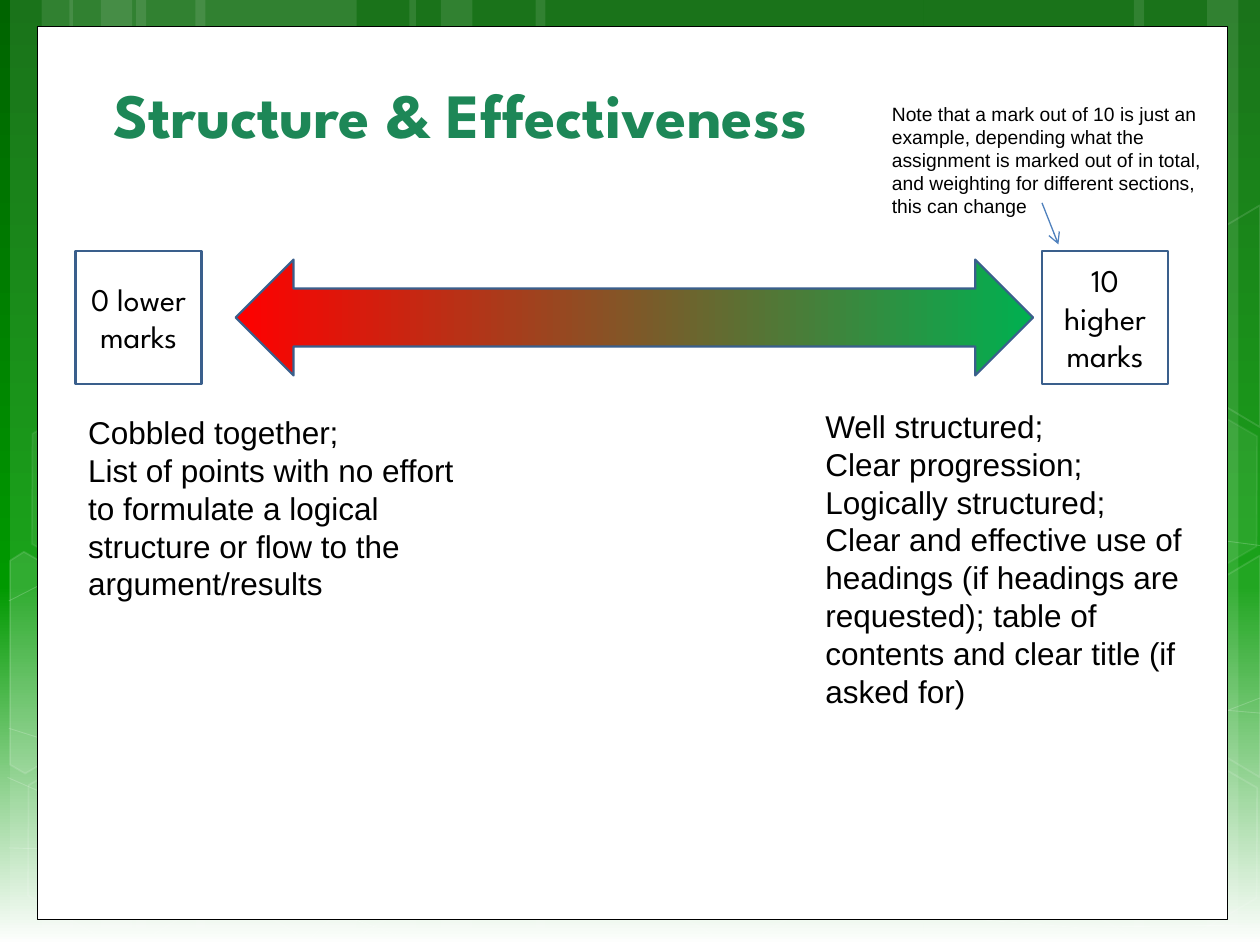
from typing import NamedTuple, Optional

from lxml.etree import SubElement
from pptx import Presentation
from pptx.dml.color import RGBColor
from pptx.enum.shapes import MSO_CONNECTOR, MSO_SHAPE
from pptx.enum.text import MSO_ANCHOR, MSO_AUTO_SIZE, PP_ALIGN
from pptx.oxml.ns import qn
from pptx.util import Inches, Pt

WHITE, BLACK = "FFFFFF", "000000"
OUTLINE = "3A5F8C"
HEADING_FONT, BODY_FONT = "League Spartan", "Arial"


class Box(NamedTuple):
    left: float
    top: float
    width: float
    height: float


class Hexagon(NamedTuple):
    left: float
    top: float
    fill_alpha: Optional[int]
    line_alpha: int


class Trace(NamedTuple):
    points: list
    width: float
    line_alpha: int
    fill_alpha: Optional[int] = None
    closed: bool = False


class Criteria(NamedTuple):
    box: Box
    lines: list


class Mark(NamedTuple):
    box: Box
    label: str


BANDS = [
    (1.08, 1.75), (0.08, 0.5), (0.33, 0.83), (1.55, 1.75), (0.55, 0.5), (0.8, 0.83),
    (7.33, 1.75), (9.58, 0.42), (9, 0.83), (4.25, 3.08), (3.25, 0.5), (3.5, 0.83),
]
HEXAGONS = [
    Hexagon(4.97, 5.89, 6, 12), Hexagon(0.11, 5.91, None, 12),
    Hexagon(0.14, 3.12, 7, 8), Hexagon(1.74, 5.92, None, 12),
    Hexagon(8.34, 5.93, None, 12), Hexagon(8.34, 3.14, 7, 8),
]
TRACES = [
    Trace([(0.07, 6.73), (1.9, 6.78), (4.58, 6.65), (7.92, 6.17), (9.4, 5.77), (10, 5.54)], 0.5, 20),
    Trace([(0.07, 4.77), (0.5, 4.55), (1.21, 4.31), (3.47, 3.87), (6.54, 3.87), (10, 4.33)], 0.5, 20),
    Trace([(0.06, 6.17), (1.8, 6.93), (3.34, 7.49)], 0.5, 20),
    Trace([(0.07, 5.78), (1.28, 6.16), (3.57, 6.73), (6.28, 7.18), (8.53, 7.36), (10, 7.34)], 0.5, 20),
    Trace([(2.42, 7.49), (3.02, 6.91), (3.88, 6.39), (6.08, 5.78), (7.94, 5.62), (9.53, 5.62), (10, 5.66)], 0.5, 20),
    Trace([(0.08, 4.45), (0.19, 4.38), (0.96, 4.82), (0.95, 5.7), (0.2, 6.14), (0.08, 6.07)], 1, 12, 10, True),
    Trace([(9.26, 4.85), (10, 4.41), (10, 6.17), (9.26, 5.73)], 1, 12, 4, True),
    Trace([(9.26, 2.07), (10, 1.63), (10, 3.39), (9.26, 2.95)], 1, 12, None, True),
]
CRITERIA = [
    Criteria(Box(0.6, 3.23, 3.25, 1.62), [
        "Cobbled together;",
        "List of points with no effort to formulate a logical structure or flow to the argument/results",
    ]),
    Criteria(Box(6.45, 3.18, 3.05, 2.52), [
        "Well structured;",
        "Clear progression;",
        "Logically structured;",
        "Clear and effective use of headings (if headings are requested); "
        "table of contents and clear title (if asked for)",
    ]),
]
MARKS = [
    Mark(Box(0.6, 1.99, 1, 1.06), "0 lower marks"),
    Mark(Box(8.27, 1.99, 1, 1.06), "10 higher marks"),
]
NOTE = (
    "Note that a mark out of 10 is just an example, depending what the assignment is "
    "marked out of in total, and weighting for different sections, this can change"
)


def rgb(hex_color: str) -> RGBColor:
    return RGBColor.from_string(hex_color)


def paint(fill, hex_color: Optional[str], holder=None, alpha: Optional[int] = None) -> None:
    if hex_color is None:
        fill.background()
        return
    fill.solid()
    fill.fore_color.rgb = rgb(hex_color)
    if alpha is not None:
        color = holder.find(qn("a:solidFill")).find(qn("a:srgbClr"))
        SubElement(color, qn("a:alpha")).set("val", str(alpha * 1000))


def paint_gradient(fill, holder, stops: list, angle: int) -> None:
    fill.gradient()
    stop_list = holder.find(".//" + qn("a:gsLst"))
    for stop in list(stop_list):
        stop_list.remove(stop)
    for position, hex_color in stops:
        stop = SubElement(stop_list, qn("a:gs"))
        stop.set("pos", str(position * 1000))
        SubElement(stop, qn("a:srgbClr")).set("val", hex_color)
    holder.find(".//" + qn("a:lin")).set("ang", str(angle * 60000))


def place(shape, box: Box) -> None:
    shape.left, shape.top, shape.width, shape.height = map(Inches, box)


def add_figure(slide, preset, box: Box, fill: Optional[str], line: Optional[str], width: float = 1):
    figure = slide.shapes.add_shape(preset, *map(Inches, box))
    figure.shadow.inherit = False
    paint(figure.fill, fill)
    paint(figure.line.fill, line)
    figure.line.width = Pt(width)
    return figure


def glaze(figure, fill_alpha: Optional[int], line_alpha: Optional[int], width: float = 1) -> None:
    figure.shadow.inherit = False
    properties = figure.element.spPr
    paint(figure.fill, None if fill_alpha is None else WHITE, properties, fill_alpha)
    figure.line.width = Pt(width)
    paint(figure.line.fill, None if line_alpha is None else WHITE, properties.find(qn("a:ln")), line_alpha)


def add_trace(slide, trace: Trace) -> None:
    start, *rest = [(Inches(x), Inches(y)) for x, y in trace.points]
    builder = slide.shapes.build_freeform(*start)
    builder.add_line_segments(rest, close=trace.closed)
    glaze(builder.convert_to_shape(), trace.fill_alpha, trace.line_alpha, trace.width)


def add_backdrop(slide) -> None:
    paint_gradient(slide.background.fill, slide.element, [(0, "006400"), (62, "009900"), (100, WHITE)], 90)
    for left, width in BANDS:
        band = add_figure(slide, MSO_SHAPE.RECTANGLE, Box(left, 0, width, 7.5), None, None)
        glaze(band, 10, None)
    for trace in TRACES:
        add_trace(slide, trace)
    for hexagon in HEXAGONS:
        cell = add_figure(slide, MSO_SHAPE.HEXAGON, Box(hexagon.left, hexagon.top, 1.75, 1.52), None, None)
        cell.adjustments[0] = 0.285
        cell.rotation = 30
        glaze(cell, hexagon.fill_alpha, hexagon.line_alpha)
    add_figure(slide, MSO_SHAPE.RECTANGLE, Box(0.3, 0.21, 9.44, 7.09), WHITE, BLACK, 0.5)


def write(shape, text: str, font: str, size: int, color: str = BLACK, bold: bool = False,
          align=PP_ALIGN.LEFT, anchor=MSO_ANCHOR.TOP) -> None:
    frame = shape.text_frame
    frame.text = text
    frame.word_wrap = True
    frame.auto_size = MSO_AUTO_SIZE.NONE
    frame.vertical_anchor = anchor
    for paragraph in frame.paragraphs:
        paragraph.alignment = align
        paragraph.space_before = Pt(0)
        for run in paragraph.runs:
            run.font.name, run.font.size, run.font.bold = font, Pt(size), bold
            run.font.color.rgb = rgb(color)


def fill_criteria(placeholder, criteria: Criteria) -> None:
    place(placeholder, criteria.box)
    write(placeholder, "\n".join(criteria.lines), BODY_FONT, 18)
    for paragraph in placeholder.text_frame.paragraphs:
        properties = paragraph._p.get_or_add_pPr()
        properties.set("marL", "0")
        properties.set("indent", "0")
        SubElement(properties, qn("a:buNone"))


def add_pointer(slide) -> None:
    ends = map(Inches, (8.27, 1.61, 8.4, 1.94))
    pointer = slide.shapes.add_connector(MSO_CONNECTOR.STRAIGHT, *ends)
    pointer.line.width = Pt(0.75)
    paint(pointer.line.fill, "4F81BD")
    properties = pointer.element.spPr
    SubElement(properties.find(qn("a:ln")), qn("a:tailEnd")).set("type", "arrow")
    SubElement(properties, qn("a:effectLst"))


def main() -> None:
    deck = Presentation()
    deck.slide_width, deck.slide_height = Inches(10), Inches(7.5)
    slide = deck.slides.add_slide(deck.slide_layouts[3])
    title, *columns = slide.placeholders
    add_backdrop(slide)
    for placeholder in (title, *columns):
        placeholder.element.getparent().append(placeholder.element)

    place(title, Box(0.8, 0.49, 8.42, 0.76))
    write(title, "Structure & Effectiveness", HEADING_FONT, 36, "1D8757", True, anchor=MSO_ANCHOR.BOTTOM)
    for column, criteria in zip(columns, CRITERIA):
        fill_criteria(column, criteria)
    for mark in MARKS:
        square = add_figure(slide, MSO_SHAPE.RECTANGLE, mark.box, None, OUTLINE, 1.25)
        write(square, mark.label, HEADING_FONT, 18, align=PP_ALIGN.CENTER, anchor=MSO_ANCHOR.MIDDLE)
    scale = add_figure(slide, MSO_SHAPE.LEFT_RIGHT_ARROW, Box(1.87, 2.06, 6.33, 0.92), None, OUTLINE, 1.25)
    paint_gradient(scale.fill, scale.element.spPr, [(0, "FF0000"), (100, "00B050")], 0)
    add_pointer(slide)
    note = slide.shapes.add_textbox(*map(Inches, (6.98, 0.76, 2.72, 1.03)))
    write(note, NOTE, BODY_FONT, 11)
    deck.save("out.pptx")


if __name__ == "__main__":
    main()
